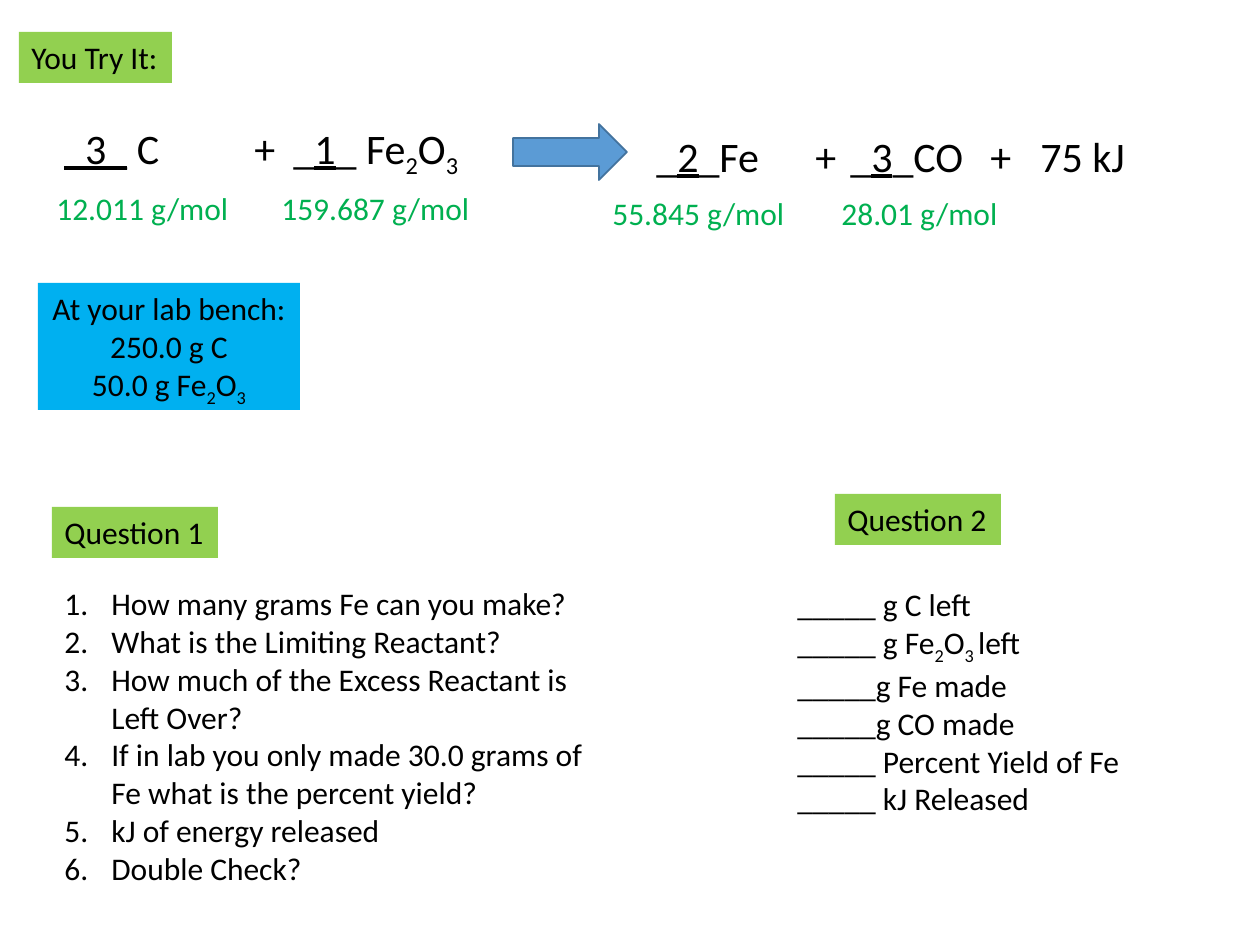
"""Build the reaction practice slide with its molar masses and questions."""
from dataclasses import dataclass

from lxml.etree import SubElement as Sub
from pptx import Presentation as Deck
from pptx.dml.color import RGBColor as Rgb
from pptx.enum.shapes import MSO_SHAPE as Kind
from pptx.enum.text import MSO_AUTO_SIZE as Fit, PP_ALIGN as Align
from pptx.oxml.ns import qn
from pptx.slide import Slide
from pptx.util import Emu, Pt

SCALE = 914400 / 126


@dataclass(frozen=True)
class Theme:
    face: str = "Calibri"
    ink: str = "000000"
    mass: str = "00B050"
    tag: str = "92D050"
    bench: str = "00B0F0"
    arrow: str = "5B9BD5"
    edge: str = "43739E"
    body: int = 18
    large: int = 24


@dataclass(frozen=True)
class Box:
    left: int
    top: int
    wide: int
    high: int
    lines: tuple[str, ...]
    size: int = Theme.body
    ink: str = Theme.ink
    fill: str = ""
    mid: bool = False
    wrap: bool = False
    count: bool = False
    tabs: tuple[int, ...] = ()


def px(num: int) -> Emu:
    return Emu(round(num * SCALE))


def add_runs(para, line: str) -> None:
    """Split a line at bars, where ~ marks a subscript and ^ an underline."""
    for part in line.split("|"):
        run = para.add_run()
        run.text = part.lstrip("~^")
        if part.startswith("~"):
            run._r.get_or_add_rPr().set("baseline", "-25000")
        elif part.startswith("^"):
            run.font.underline = True


def add_marks(para, box: Box) -> None:
    """Give a paragraph its numbering and tab stops."""
    props = para._p.get_or_add_pPr()
    if box.count:
        props.set("marL", str(px(47)))
        props.set("indent", str(-px(47)))
        Sub(props, qn("a:buFont"), typeface="+mj-lt")
        Sub(props, qn("a:buAutoNum"), type="arabicPeriod")
    if box.tabs:
        stops = Sub(props, qn("a:tabLst"))
        for stop in box.tabs:
            Sub(stops, qn("a:tab"), pos=str(px(stop)), algn="l")


def add_box(slide: Slide, box: Box) -> None:
    """Draw a text box with its fill and lines."""
    shape = slide.shapes.add_textbox(
        px(box.left), px(box.top), px(box.wide), px(box.high))
    if box.fill:
        shape.fill.solid()
        shape.fill.fore_color.rgb = Rgb.from_string(box.fill)
    frame = shape.text_frame
    frame.word_wrap = box.wrap
    frame.auto_size = Fit.SHAPE_TO_FIT_TEXT
    for num, line in enumerate(box.lines):
        para = frame.add_paragraph() if num else frame.paragraphs[0]
        add_marks(para, box)
        if box.mid:
            para.alignment = Align.CENTER
        para.font.name = Theme.face
        para.font.size = Pt(box.size)
        para.font.color.rgb = Rgb.from_string(box.ink)
        add_runs(para, line)


def add_arrow(slide: Slide) -> None:
    """Draw the reaction arrow."""
    arrow = slide.shapes.add_shape(
        Kind.RIGHT_ARROW, px(513), px(124), px(114), px(56))
    arrow.shadow.inherit = False
    arrow.fill.solid()
    arrow.fill.fore_color.rgb = Rgb.from_string(Theme.arrow)
    arrow.line.color.rgb = Rgb.from_string(Theme.edge)
    arrow.line.width = Pt(1)


def tag(left: int, top: int, wide: int, text: str) -> Box:
    return Box(left, top, wide, 51, (text,), fill=Theme.tag)


def term(left: int, top: int, wide: int, text: str,
         tabs: tuple[int, ...] = ()) -> Box:
    return Box(left, top, wide, 63, (text,), Theme.large,
               wrap=bool(tabs), tabs=tabs)


def mass(left: int, top: int, wide: int, text: str) -> Box:
    return Box(left, top, wide, 51, (f"{text} g/mol",), ink=Theme.mass)


BENCH = Box(38, 283, 262, 127, (
    "At your lab bench:", "250.0 g C", "50.0 g Fe|~2|O|~3",
), fill=Theme.bench, mid=True)
TASKS = Box(52, 578, 565, 317, (
    "How many grams Fe can you make?",
    "What is the Limiting Reactant?",
    "How much of the Excess Reactant is Left Over?",
    "If in lab you only made 30.0 grams of Fe what is the percent yield?",
    "kJ of energy released",
    "Double Check?",
), wrap=True, count=True)
BLANKS = Box(785, 579, 352, 242, (
    "_____ g C left",
    "_____ g Fe|~2|O|~3 |left",
    "_____g Fe made",
    "_____g CO made",
    "_____ Percent Yield of Fe",
    "_____ kJ Released",
))
TAGS = (
    tag(52, 507, 166, "Question 1"),
    tag(835, 494, 166, "Question 2"),
    tag(19, 32, 153, "You Try It:"),
)
TERMS = (
    term(242, 116, 46, "+"),
    term(281, 116, 195, "_|^1|_ Fe|~2|O|~3"),
    term(644, 124, 130, "_|^2|_Fe"),
    term(803, 124, 46, "+"),
    term(52, 116, 140, "^_3_| C"),
    term(838, 124, 302, "_|^3|_CO\t+\t75 kJ", (140, 190)),
)
MASSES = (
    mass(44, 183, 199, "12.011"),
    mass(269, 183, 215, "159.687"),
    mass(600, 188, 199, "55.845"),
    mass(829, 188, 183, "28.01"),
)


def main() -> None:
    """Make the deck and save it."""
    deck = Deck()
    deck.slide_width, deck.slide_height = px(1260), px(945)
    slide = deck.slides.add_slide(deck.slide_layouts[6])
    for box in (BENCH, TASKS, BLANKS, *TAGS):
        add_box(slide, box)
    add_arrow(slide)
    for box in (*TERMS, *MASSES):
        add_box(slide, box)
    deck.save("out.pptx")


if __name__ == "__main__":
    main()
